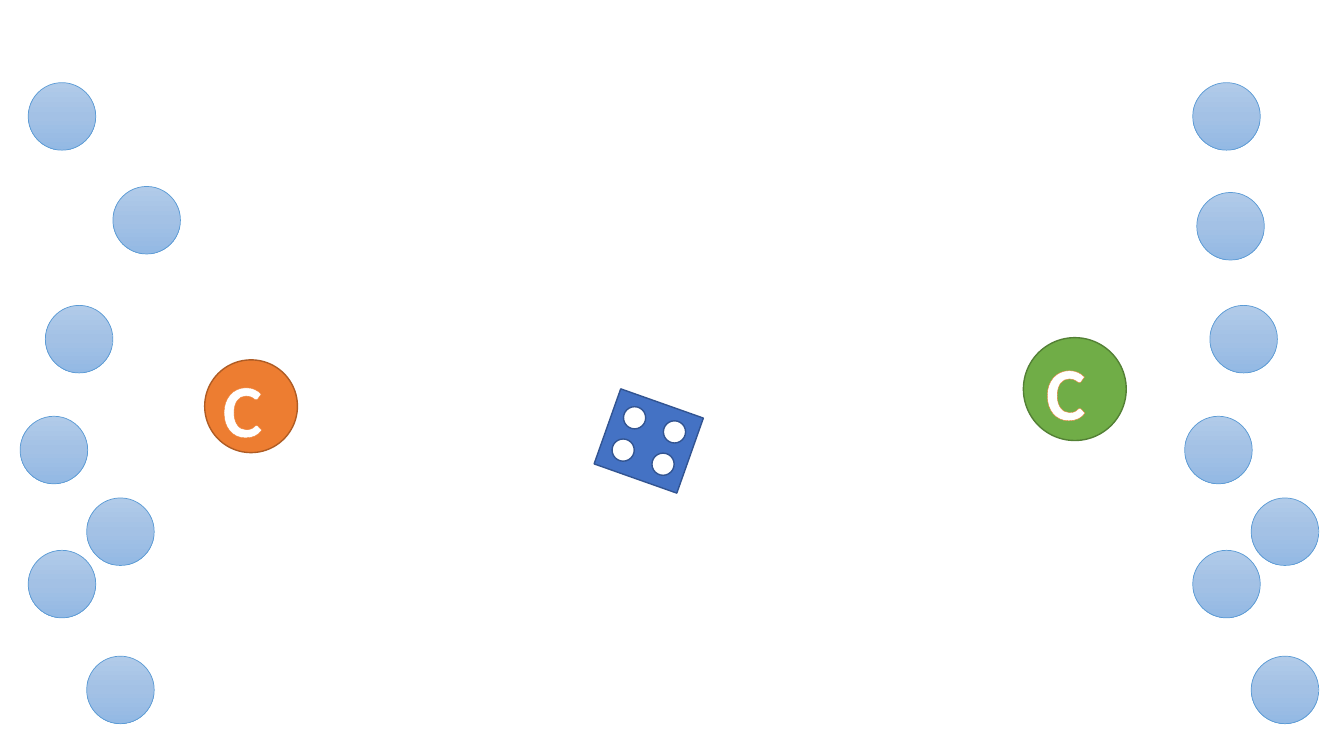
from copy import deepcopy
from math import cos, radians, sin

from lxml.etree import SubElement
from pptx import Presentation
from pptx.dml.color import RGBColor
from pptx.enum.shapes import MSO_SHAPE as Preset
from pptx.enum.text import MSO_AUTO_SIZE as AutoSize, PP_ALIGN as Align
from pptx.oxml.ns import qn
from pptx.util import Inches, Pt

COLORS = {
    "white": "FFFFFF",
    "die": "4472C4",
    "die_line": "325491",
    "player_top": "B1CBE9",
    "player_middle": "A3C1E5",
    "player_bottom": "93B9E4",
    "player_line": "5B9BD5",
    "orange": "ED7D31",
    "orange_line": "AF5C24",
    "green": "70AD47",
    "green_line": "538035",
}
PLAYER_STOPS = [(0, "player_top"), (0.5, "player_middle"), (1, "player_bottom")]
PLAYER_SIZE = 0.67
FORMATION = [(0.25, 2.21), (0.66, 5.69), (0.08, 0), (0, 3.31), (0.66, 4.12), (0.08, 4.64)]
PIP_SIZE = 0.22
PIP_CORNERS = [(-0.21, 0.17), (0.21, 0.17), (0.21, -0.17), (-0.21, -0.17)]
LETTER_FONT = {"name": "Calibri", "size": Pt(54), "bold": True}
LETTER_FRAME = {"word_wrap": False, "auto_size": AutoSize.SHAPE_TO_FIT_TEXT}


def rgb(name):
    return RGBColor.from_string(COLORS[name])


def apply(target, values):
    for name, value in values.items():
        setattr(target, name, value)


def add_figure(shapes, preset, box, line, weight, fill=None):
    figure = shapes.add_shape(preset, *map(Inches, box))
    figure.shadow.inherit = False
    figure.line.color.rgb = rgb(line)
    figure.line.width = Pt(weight)
    if fill:
        figure.fill.solid()
        figure.fill.fore_color.rgb = rgb(fill)
    return figure


def add_player(page, left, top):
    box = (left, top, PLAYER_SIZE, PLAYER_SIZE)
    player = add_figure(page.shapes, Preset.OVAL, box, "player_line", 0.5)
    player.fill.gradient()
    player.fill.gradient_angle = 270
    stop_list = player.element.spPr.find(".//" + qn("a:gsLst"))
    stop_list.insert(1, deepcopy(stop_list[0]))
    for stop, (position, color) in zip(player.fill.gradient_stops, PLAYER_STOPS):
        stop.position = position
        stop.color.rgb = rgb(color)


def add_team(page, left, top, extra_player):
    for across, down in FORMATION + [extra_player]:
        add_player(page, left + across, top + down)


def add_die(page, box, rotation):
    left, top, width, height = box
    group = page.shapes.add_group_shape()
    die = add_figure(group.shapes, Preset.RECTANGLE, box, "die_line", 1, "die")
    die.rotation = rotation
    turn = radians(rotation)
    for across, down in PIP_CORNERS:
        pip_x = left + width / 2 + across * cos(turn) - down * sin(turn)
        pip_y = top + height / 2 + across * sin(turn) + down * cos(turn)
        pip_box = (pip_x - PIP_SIZE / 2, pip_y - PIP_SIZE / 2, PIP_SIZE, PIP_SIZE)
        add_figure(group.shapes, Preset.OVAL, pip_box, "die_line", 1, "white")


def outline_letter(span, color, weight):
    properties = span.font._element
    line = SubElement(properties, qn("a:ln"), w=str(Pt(weight)))
    fill = SubElement(line, qn("a:solidFill"))
    SubElement(fill, qn("a:srgbClr"), val=COLORS[color])
    properties.insert(0, line)


def add_captain(page, box, color, letter_box):
    left, top = box[:2]
    across, down, width, height = letter_box
    group = page.shapes.add_group_shape()
    add_figure(group.shapes, Preset.OVAL, box, color + "_line", 1, color)
    letter = group.shapes.add_textbox(*map(Inches, (left + across, top + down, width, height)))
    apply(letter.text_frame, LETTER_FRAME)
    para = letter.text_frame.paragraphs[0]
    para.alignment = Align.CENTER
    span = para.add_run()
    span.text = "C"
    apply(span.font, LETTER_FONT)
    span.font.color.rgb = rgb("white")
    outline_letter(span, "orange", 1.75)


def main():
    deck = Presentation()
    apply(deck, {"slide_width": Inches(13.33), "slide_height": Inches(7.5)})
    page = deck.slides.add_slide(deck.slide_layouts[6])
    add_die(page, (6, 3.98, 0.87, 0.79), 19.5)
    add_team(page, 0.2, 0.82, (0.92, 1.03))
    add_team(page, 11.75, 0.82, (0.12, 1.09))
    add_captain(page, (2.03, 3.57, 0.92, 0.92), "orange", (0.07, -0.03, 0.61, 1.03))
    add_captain(page, (10.15, 3.35, 1.02, 1.02), "green", (0.01, 0.02, 0.82, 1.01))
    deck.save("out.pptx")


if __name__ == "__main__":
    main()
